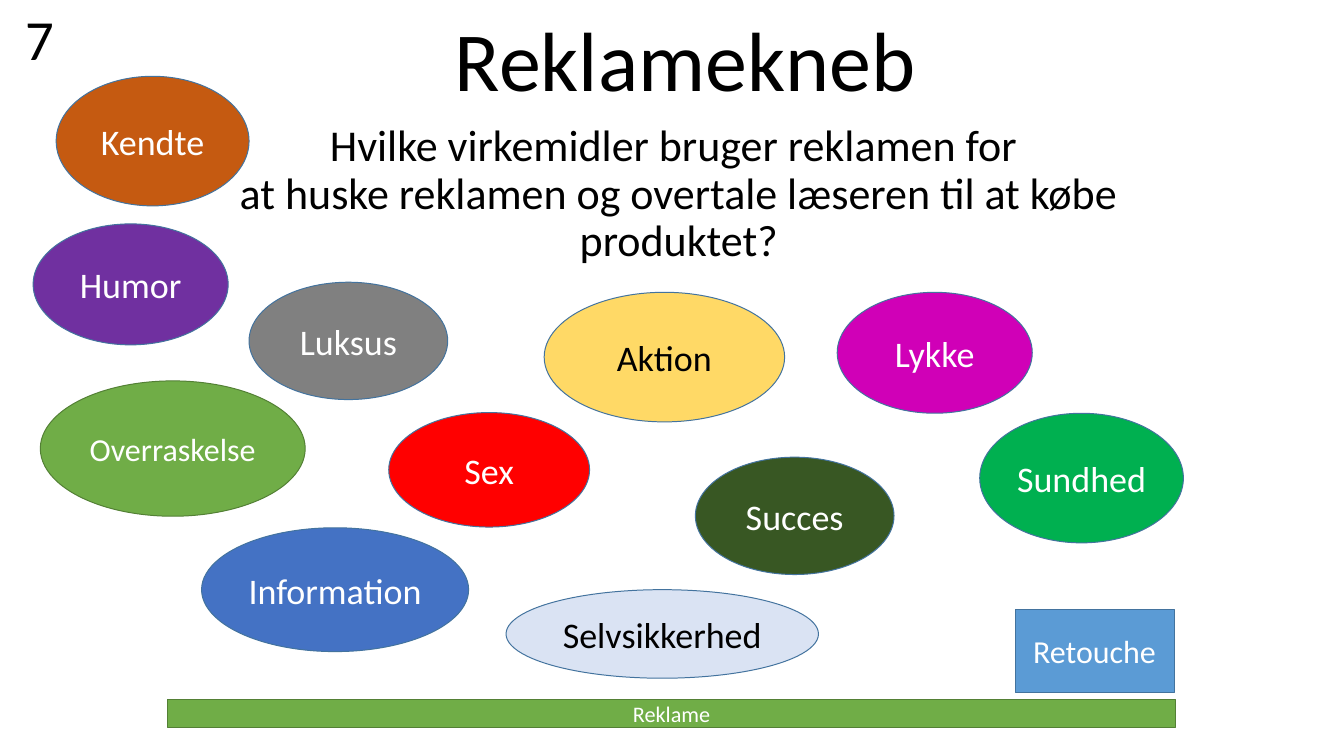
"""Build the slide on advertising tricks: a question surrounded by coloured keywords."""
from pptx import Presentation
from pptx import util as u
from pptx.dml.color import RGBColor
from pptx.enum import shapes, text

COLORS = {
    "black": "000000", "white": "FFFFFF", "blue_edge": "43739E", "green_edge": "538035",
    "red": "FF0000", "purple": "7030A0", "gray": "808080", "rust": "C55A11",
    "yellow": "FFD966", "green": "70AD47", "blue": "4472C4", "sky": "5B9BD5",
    "pale": "DAE3F3", "forest": "385723", "magenta": "D000B7", "emerald": "00B050",
}
FONT = "Calibri"
HEADING = "Reklamekneb"
QUESTION = ["Hvilke virkemidler bruger reklamen for ",
            "at huske reklamen og overtale læseren til at købe produktet?"]
NUMBER = "7"
OVAL, BOX = shapes.MSO_SHAPE.OVAL, shapes.MSO_SHAPE.RECTANGLE
KEYWORDS = [
    ("Reklame", BOX, (2.33, 9.71, 14, 0.39), "green", 22.2),
    ("Sex", OVAL, (5.4, 5.73, 2.79, 1.59), "red", 36),
    ("Humor", OVAL, (0.46, 3.11, 2.71, 1.68), "purple", 36),
    ("Luksus", OVAL, (3.46, 3.92, 2.76, 1.63), "gray", 36),
    ("Kendte", OVAL, (0.78, 1.06, 2.68, 1.8), "rust", 36),
    ("Aktion", OVAL, (7.56, 4.06, 3.34, 1.8), "yellow", 36),
    ("Overraskelse", OVAL, (0.56, 5.29, 3.68, 1.88), "green", 32),
    ("Information", OVAL, (2.8, 7.33, 3.71, 1.72), "blue", 36),
    ("Retouche", BOX, (14.1, 8.46, 2.21, 1.16), "sky", 32),
    ("Selvsikkerhed", OVAL, (7.03, 8.19, 4.34, 1.23), "pale", 36),
    ("Succes", OVAL, (9.66, 6.35, 2.76, 1.63), "forest", 36),
    ("Lykke", OVAL, (11.63, 4.06, 2.71, 1.68), "magenta", 36),
    ("Sundhed", OVAL, (13.61, 5.74, 2.83, 1.8), "emerald", 36),
]
LIGHT_FILLS = {"yellow", "pale"}


def rgb(name):
    return RGBColor.from_string(COLORS[name])


def place(part, at):
    part.left, part.top, part.width, part.height = map(u.Inches, at)


def write(part, lines, size, color="black", align=text.PP_ALIGN.CENTER,
          anchor=text.MSO_ANCHOR.TOP, wrap=True):
    frame = part.text_frame
    frame.word_wrap = wrap
    frame.auto_size = text.MSO_AUTO_SIZE.NONE
    frame.vertical_anchor = anchor
    paragraph = frame.paragraphs[0]
    paragraph.alignment = align
    for index, line in enumerate(lines):
        if index:
            paragraph.add_line_break()
        run = paragraph.add_run()
        run.text = line
        run.font.name, run.font.size = FONT, u.Pt(size)
        run.font.color.rgb = rgb(color)
    return paragraph


def add_keyword(slide, word, outline, at, fill, size):
    keyword = slide.shapes.add_shape(outline, *map(u.Inches, at))
    keyword.shadow.inherit = False
    keyword.fill.solid()
    keyword.fill.fore_color.rgb = rgb(fill)
    keyword.line.color.rgb = rgb("green_edge" if fill == "green" else "blue_edge")
    keyword.line.width = u.Pt(1)
    write(keyword, [word], size, "black" if fill in LIGHT_FILLS else "white",
          anchor=text.MSO_ANCHOR.MIDDLE)


def main():
    deck = Presentation()
    deck.slide_width, deck.slide_height = u.Inches(18.67), u.Inches(10.5)
    slide = deck.slides.add_slide(deck.slide_layouts[0])

    heading, question = slide.placeholders
    place(heading, (4.27, 0.2, 10.5, 1.38))
    write(heading, [HEADING], 84, anchor=text.MSO_ANCHOR.BOTTOM).line_spacing = 0.9
    place(question, (2.43, 1.67, 14, 2.49))
    asked = write(question, QUESTION, 44)
    asked.line_spacing, asked.space_before = 0.9, u.Pt(14)

    number = slide.shapes.add_textbox(*map(u.Inches, (0.26, 0, 0.61, 1.06)))
    write(number, [NUMBER], 56.7, align=text.PP_ALIGN.LEFT, wrap=False)

    for keyword in KEYWORDS:
        add_keyword(slide, *keyword)
    deck.save("out.pptx")


if __name__ == "__main__":
    main()
